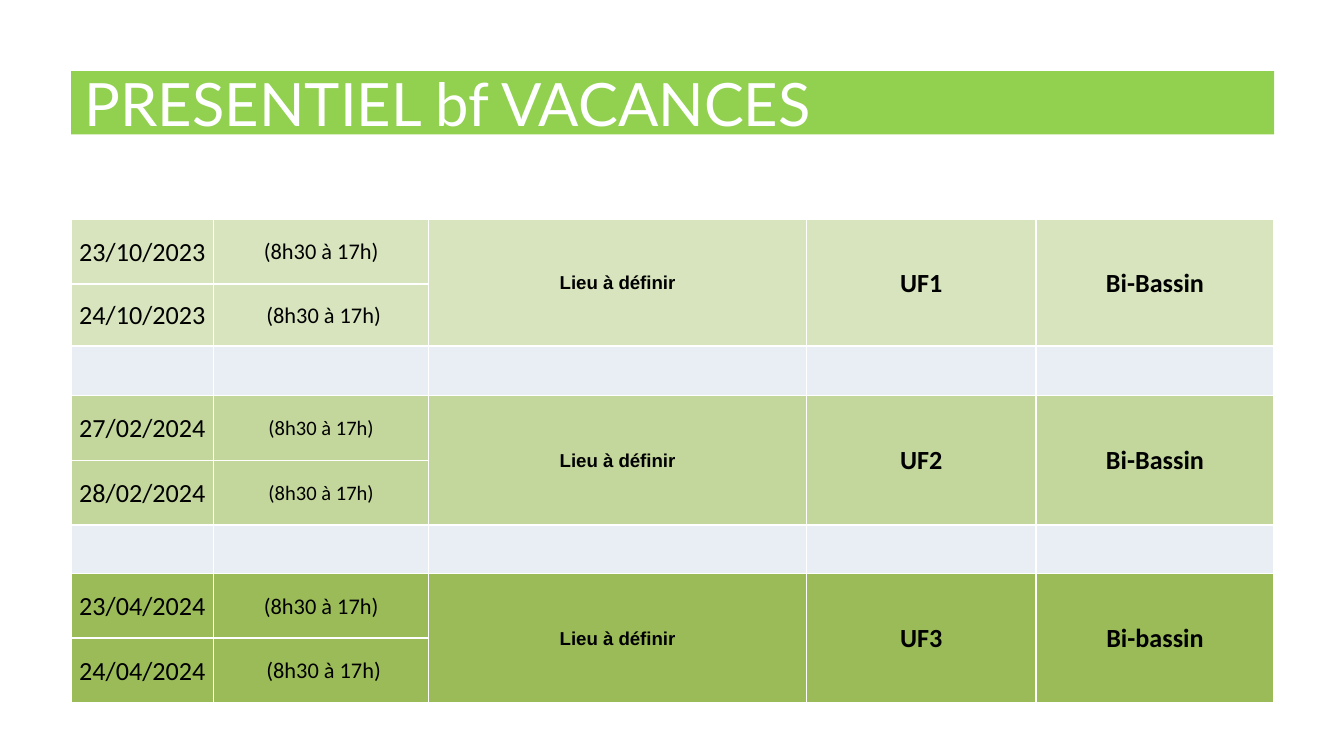
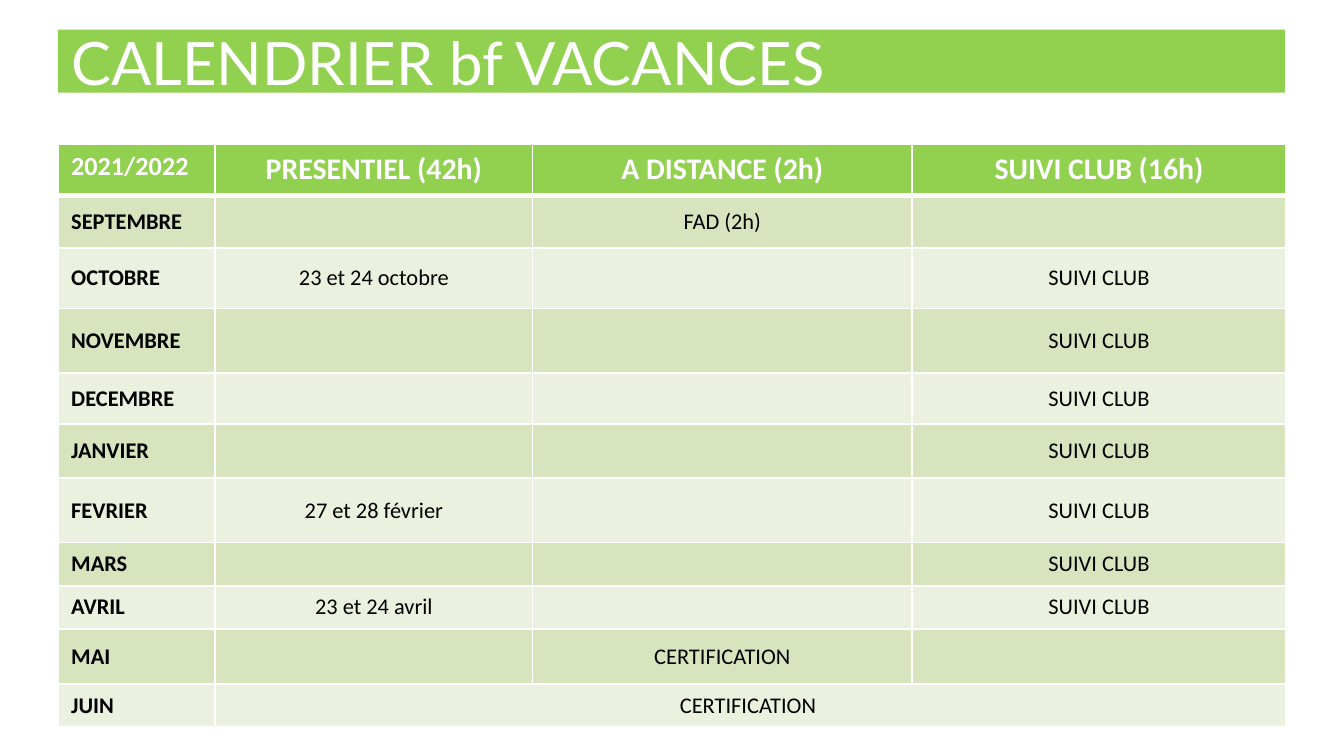
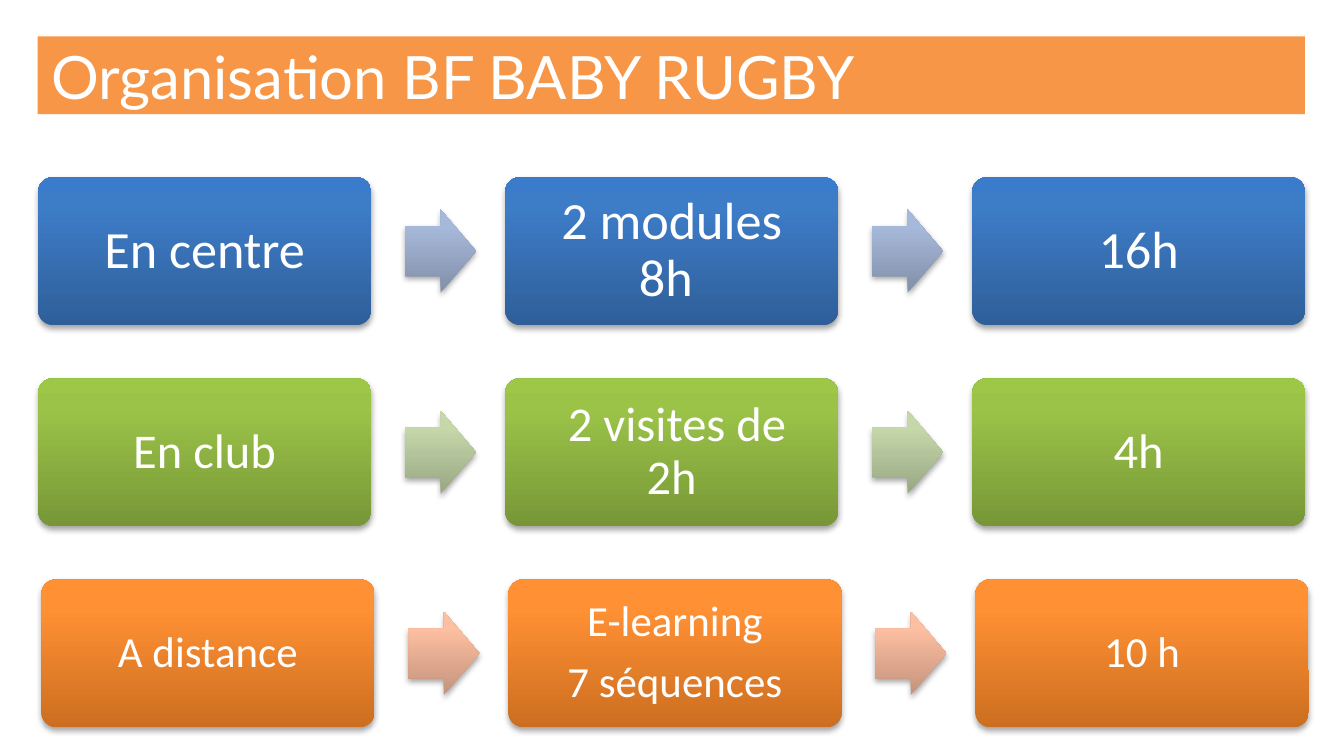
from typing import NamedTuple

from pptx import Presentation
from pptx.dml.color import RGBColor
from pptx.enum.shapes import MSO_SHAPE
from pptx.enum.text import MSO_ANCHOR, MSO_AUTO_SIZE, PP_ALIGN
from pptx.oxml import parse_xml
from pptx.oxml.ns import nsdecls
from pptx.slide import Slide
from pptx.table import Table
from pptx.util import Emu, Inches, Pt

WIDE, TALL = Inches(10), Inches(5.625)
HUES = {
    "white": "FFFFFF", "black": "000000", "lime": "92D050", "orange": "F79646",
    "pale": "EBF1DE", "light": "D7E4BD", "mid": "C3D69B", "deep": "9BBB59", "gap": "E9EDF4",
}
GRADES = {
    "blue": ("2F5F99", "3D7CC7", "3A7CCB"), "blue tint": ("818FA8", "A7B9DA", "A7BADC"),
    "green": ("779737", "9BC348", "9DC746"), "green tint": ("98A683", "C6D8AA", "C7DAAA"),
    "amber": ("CC6E20", "FF9034", "FF9136"), "amber tint": ("C3937C", "FDBFA1", "FFBFA1"),
}


class Area(NamedTuple):
    """Shares of the slide, in percent."""
    left: float
    top: float
    width: float
    height: float

    def emu(self) -> tuple[Emu, ...]:
        sides = (WIDE, TALL, WIDE, TALL)
        return tuple(Emu(round(side * part / 100)) for side, part in zip(sides, self))


class Look(NamedTuple):
    size: float
    bold: bool = False
    font: str = "Calibri"
    ink: str = "black"
    align: PP_ALIGN = PP_ALIGN.CENTER


class Course(NamedTuple):
    days: tuple[str, str]
    hours: tuple[str, str]
    size: float
    unit: str
    zone: str
    tone: str


class Month(NamedTuple):
    name: str
    height: float
    centre: str = ""
    remote: str = ""
    club: str = ""


class Chain(NamedTuple):
    grade: str
    size: float
    inset: float
    steps: tuple[str, str, str]
    shift: float = 0


HOURS = "(8h30 à 17h)"
CLUB = "SUIVI CLUB"
COURSES = (
    Course(("23/10/2023", "24/10/2023"), (HOURS, " " + HOURS), 12, "UF1", "Bi-Bassin", "light"),
    Course(("27/02/2024", "28/02/2024"), (HOURS, HOURS), 11, "UF2", "Bi-Bassin", "mid"),
    Course(("23/04/2024", "24/04/2024"), (HOURS, " " + HOURS), 12, "UF3", "Bi-bassin", "deep"),
)
MONTHS = (
    Month("SEPTEMBRE", 0.39, remote="FAD (2h)"),
    Month("OCTOBRE", 0.45, "23 et 24 octobre", club=CLUB),
    Month("NOVEMBRE", 0.48, club=CLUB),
    Month("DECEMBRE", 0.38, club=CLUB),
    Month("JANVIER", 0.4, club=CLUB),
    Month("FEVRIER", 0.48, "27 et 28 février", club=CLUB),
    Month("MARS", 0.32, club=CLUB),
    Month("AVRIL", 0.32, "23 et 24 avril", club=CLUB),
    Month("MAI", 0.41, remote="CERTIFICATION"),
    Month("JUIN", 0.32, "CERTIFICATION "),
)
CHAINS = (
    Chain("blue", 28, 0.15, ("En centre", "2 modules 8h ", "16h")),
    Chain("green", 26, 0.14, ("En club", " 2 visites de 2h", "4h")),
    Chain("amber", 23, 0.13, ("A distance", "E-learning\n7 séquences", "10 h"), 0.25),
)


def style(frame, look: Look) -> None:
    for para in frame.paragraphs:
        para.alignment = look.align
        for run in para.runs:
            font = run.font
            font.size, font.bold, font.name = Pt(look.size), look.bold, look.font
            font.color.rgb = RGBColor.from_string(HUES[look.ink])


def start(deck, text: str, area: Area, tone: str) -> Slide:
    slide = deck.slides.add_slide(deck.slide_layouts[5])
    title = slide.shapes.title
    title.left, title.top, title.width, title.height = area.emu()
    title.fill.solid()
    title.fill.fore_color.rgb = RGBColor.from_string(HUES[tone])
    frame = title.text_frame
    frame.text = text
    frame.word_wrap = True
    frame.auto_size = MSO_AUTO_SIZE.NONE
    frame.vertical_anchor = MSO_ANCHOR.MIDDLE
    style(frame, Look(32, font="Lato", ink="white", align=PP_ALIGN.LEFT))
    return slide


def grid(slide: Slide, area: Area, cols: list[float], rows: list[float], head: bool) -> Table:
    box = area.emu()
    table = slide.shapes.add_table(len(rows), len(cols), *box).table
    table.first_row, table.horz_banding = head, False
    for col, part in zip(table.columns, cols):
        col.width = Emu(round(box[2] * part / sum(cols)))
    for row, part in zip(table.rows, rows):
        row.height = Emu(round(box[3] * part / sum(rows)))
    return table


def put(cell, text: str, look: Look, tone: str, base: float = 1, tight: bool = False) -> None:
    if tight:
        cell.margin_left = cell.margin_top = cell.margin_right = Inches(0.01)
        cell.margin_bottom = 0
    for side, points in (("L", 1), ("R", 1), ("T", 1), ("B", base)):
        cell._tc.get_or_add_tcPr().append(parse_xml(
            f'<a:ln{side} {nsdecls("a")} w="{Pt(points)}"><a:solidFill>'
            f'<a:srgbClr val="{HUES["white"]}"/></a:solidFill></a:ln{side}>'))
    cell.fill.solid()
    cell.fill.fore_color.rgb = RGBColor.from_string(HUES[tone])
    cell.vertical_anchor = MSO_ANCHOR.MIDDLE
    frame = cell.text_frame
    if text:
        frame.text = text
        style(frame, look)
    else:
        frame.paragraphs[0]._p.get_or_add_endParaRPr().set("sz", str(look.size * 100))


def onsite(deck) -> None:
    slide = start(deck, "PRESENTIEL bf VACANCES", Area(5.3, 9.42, 89.5, 8.36), "lime")
    rows = [0.48, 0.46, 0.37, 0.48, 0.48, 0.36, 0.48, 0.48]
    table = grid(slide, Area(5.3, 29, 89.5, 64), [1.06, 1.6, 2.81, 1.71, 1.77], rows, False)
    for part, course in enumerate(COURSES):
        top = part * 3
        strong = Look(14, True)
        looks = (Look(14), Look(course.size), Look(10, True, "Arial"), strong, strong)
        shared = ("Lieu à définir", course.unit, course.zone)
        for row in range(2):
            extra = ("", "", "") if row else shared
            words = (course.days[row], course.hours[row], *extra)
            for col, (text, look) in enumerate(zip(words, looks)):
                put(table.cell(top + row, col), text, look, course.tone, tight=True)
        for col in range(2, 5):
            table.cell(top, col).merge(table.cell(top + 1, col))
        if part:
            for col in range(5):
                put(table.cell(top - 1, col), "", Look(10), "gap", tight=True)


def yearly(deck) -> None:
    slide = start(deck, "CALENDRIER bf VACANCES", Area(4.3, 3.91, 91.3, 8.36), "lime")
    rows = [0.38] + [month.height for month in MONTHS]
    table = grid(slide, Area(4.3, 19.1, 91.4, 77.1), [1.17, 2.36, 2.82, 2.78], rows, True)
    heads = ("2021/2022", "PRESENTIEL (42h)", "A DISTANCE (2h)", "SUIVI CLUB (16h)")
    for col, text in enumerate(heads):
        look = Look(16, True, ink="white") if col else Look(14, True, ink="white", align=PP_ALIGN.LEFT)
        put(table.cell(0, col), text, look, "lime", base=3)
        table.cell(0, col).vertical_anchor = MSO_ANCHOR.TOP
    for row, month in enumerate(MONTHS, 1):
        words = (month.name, month.centre, month.remote, month.club)
        for col, text in enumerate(words):
            look = Look(12) if col else Look(12, True, align=PP_ALIGN.LEFT)
            put(table.cell(row, col), text, look, "light" if row % 2 else "pale")
    last = len(MONTHS)
    table.cell(last, 1).merge(table.cell(last, 3))


def block(slide: Slide, kind: MSO_SHAPE, area: Area, grade: str, bend: tuple[float, ...]):
    shape = slide.shapes.add_shape(kind, *area.emu())
    for spot, value in enumerate(bend):
        shape.adjustments[spot] = value
    shape.line.fill.background()
    stops = "".join(f'<a:gs pos="{pos}000"><a:srgbClr val="{hue}"/></a:gs>'
                    for pos, hue in zip((0, 80, 100), GRADES[grade]))
    props = shape._element.spPr
    props.ln.addprevious(parse_xml(
        f'<a:gradFill {nsdecls("a")} rotWithShape="1"><a:gsLst>{stops}</a:gsLst>'
        '<a:lin ang="16200000" scaled="0"/></a:gradFill>'))
    props.append(parse_xml(
        f'<a:effectLst {nsdecls("a")}><a:outerShdw blurRad="40000" dist="23000" dir="5400000" '
        f'rotWithShape="0"><a:srgbClr val="{HUES["black"]}"><a:alpha val="35000"/></a:srgbClr>'
        '</a:outerShdw></a:effectLst>'))
    return shape


def label(shape, text: str, chain: Chain) -> None:
    frame = shape.text_frame
    frame.text = text
    frame.word_wrap = True
    frame.vertical_anchor = MSO_ANCHOR.MIDDLE
    inset = Inches(chain.inset)
    frame.margin_left = frame.margin_right = frame.margin_top = frame.margin_bottom = inset
    style(frame, Look(chain.size, ink="white"))
    for para in frame.paragraphs:
        para.line_spacing = 0.9
        para._p.get_or_add_pPr().append(parse_xml(
            f'<a:spcAft {nsdecls("a")}><a:spcPct val="35000"/></a:spcAft>'))


def layout(deck) -> None:
    slide = start(deck, "Organisation BF BABY RUGBY", Area(2.8, 4.8, 94.3, 10.3), "orange")
    first = Area(2.83, 23.45, 24.8, 19.56)
    arrow = Area(27.3, 4.27, 5.3, 11.02)
    for row, chain in enumerate(CHAINS):
        top = first.top + row * 26.6
        for col, text in enumerate(chain.steps):
            left = first.left + col * 34.75 + chain.shift
            area = first._replace(left=left, top=top)
            label(block(slide, MSO_SHAPE.ROUNDED_RECTANGLE, area, chain.grade, (0.1,)), text, chain)
            if col < 2:
                area = arrow._replace(left=left + arrow.left, top=top + arrow.top)
                block(slide, MSO_SHAPE.RIGHT_ARROW, area, chain.grade + " tint", (0.6, 0.5))


def main() -> None:
    deck = Presentation()
    deck.slide_width, deck.slide_height = WIDE, TALL
    for build in (onsite, yearly, layout):
        build(deck)
    deck.save("out.pptx")


if __name__ == "__main__":
    main()
